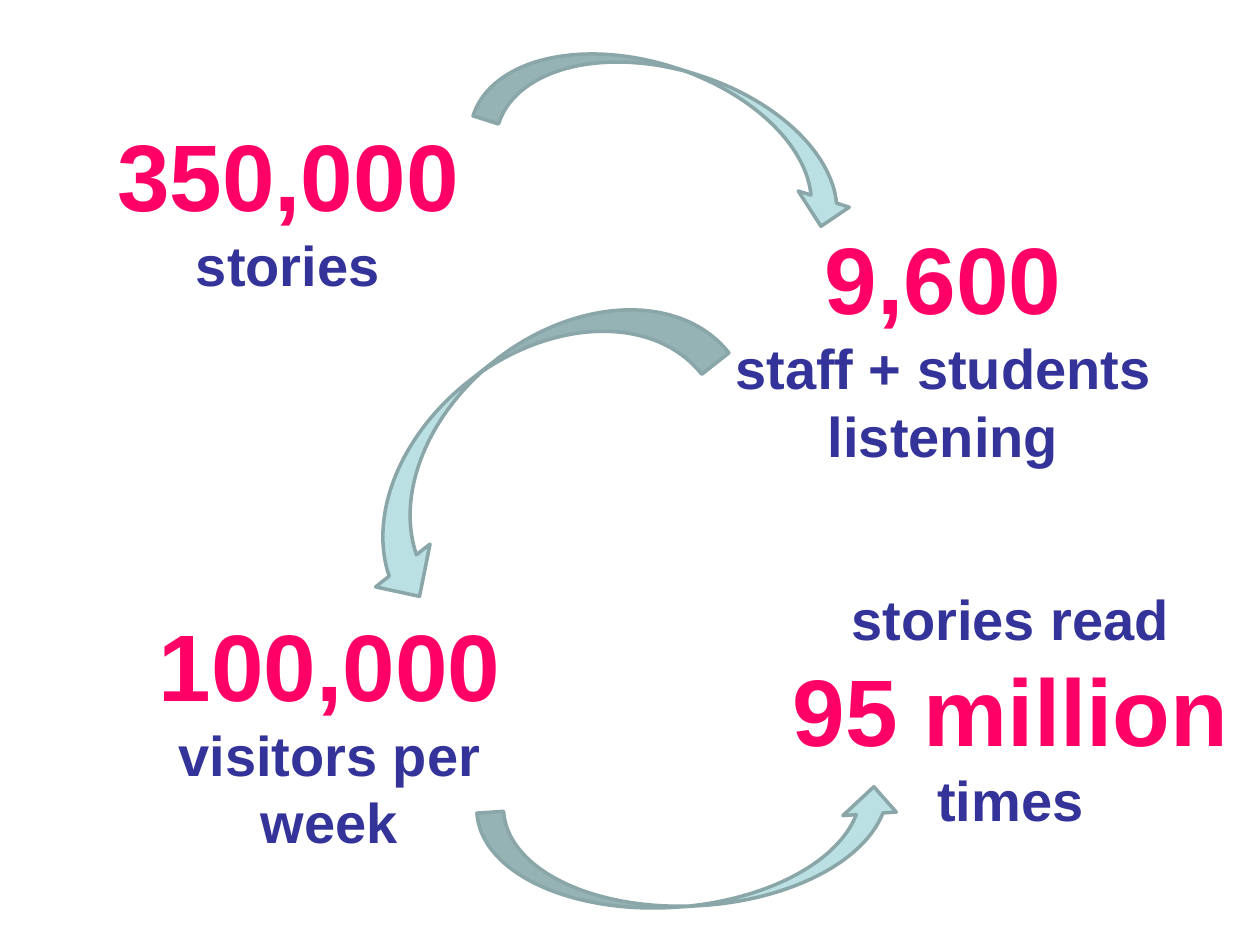
from dataclasses import dataclass

from pptx import Presentation
from pptx.dml.color import RGBColor
from pptx.enum.shapes import MSO_SHAPE
from pptx.enum.text import MSO_ANCHOR, MSO_AUTO_SIZE, PP_ALIGN
from pptx.util import Inches, Pt

PINK = RGBColor(0xFF, 0x00, 0x66)
NAVY = RGBColor(0x33, 0x33, 0x99)
AQUA = RGBColor(0xBB, 0xE0, 0xE3)
GREY = RGBColor(0x8A, 0xA6, 0xA8)
COLS = 100
ROWS = 75
BIG = {"size": Pt(54), "name": "Arial", "bold": True}
SMALL = {**BIG, "size": Pt(32)}
LAYOUT = {"word_wrap": True, "auto_size": MSO_AUTO_SIZE.SHAPE_TO_FIT_TEXT,
          "vertical_anchor": MSO_ANCHOR.TOP}


@dataclass
class Box:
    col: float
    row: float
    wide: float
    high: float


@dataclass
class Fact:
    box: Box
    figure: str
    after: str
    before: str = ""


@dataclass
class Arrow:
    box: Box
    angle: float
    flip: str = ""


FACTS = [
    Fact(Box(5.9, 8.8, 33.9, 15.5), "350,000", "stories"),
    Fact(Box(9.2, 47.7, 33.9, 20.9), "100,000", "visitors per week"),
    Fact(Box(61.6, 45.9, 37.2, 20.9), "95 million", "times", "stories read"),
    Fact(Box(52.4, 17, 44.9, 20.9), "9,600", "staff + students listening"),
]
ARROWS = [
    Arrow(Box(49.4, -5.7, 8.5, 31.1), 287.6),
    Arrow(Box(50.7, 50.8, 8.5, 33.7), 86.2, "flipV"),
    Arrow(Box(35.6, 17.2, 11, 34), 51.8, "flipH"),
]

deck = Presentation()
deck.slide_width, deck.slide_height = Inches(10), Inches(7.5)
slide = deck.slides.add_slide(deck.slide_layouts[6])


def place(box: Box) -> tuple[int, int, int, int]:
    unit_x, unit_y = deck.slide_width / COLS, deck.slide_height / ROWS
    return (round(box.col * unit_x), round(box.row * unit_y),
            round(box.wide * unit_x), round(box.high * unit_y))


def draw_fact(fact: Fact) -> None:
    frame = slide.shapes.add_textbox(*place(fact.box)).text_frame
    for name, value in LAYOUT.items():
        setattr(frame, name, value)
    lines = [(fact.before, SMALL, NAVY), (fact.figure, BIG, PINK),
             (fact.after, SMALL, NAVY)]
    for index, (text, style, color) in enumerate(line for line in lines if line[0]):
        para = frame.add_paragraph() if index else frame.paragraphs[0]
        para.alignment = PP_ALIGN.CENTER
        run = para.add_run()
        run.text = text
        for name, value in style.items():
            setattr(run.font, name, value)
        run.font.color.rgb = color


def draw_arrow(arrow: Arrow) -> None:
    shape = slide.shapes.add_shape(MSO_SHAPE.CURVED_LEFT_ARROW, *place(arrow.box))
    shape.shadow.inherit = False
    shape.rotation = arrow.angle
    if arrow.flip:
        shape.element.spPr.xfrm.set(arrow.flip, "1")
    shape.fill.solid()
    shape.fill.fore_color.rgb = AQUA
    shape.line.color.rgb = GREY
    shape.line.width = Pt(2)


for fact in FACTS:
    draw_fact(fact)
for arrow in ARROWS:
    draw_arrow(arrow)
deck.save("out.pptx")
